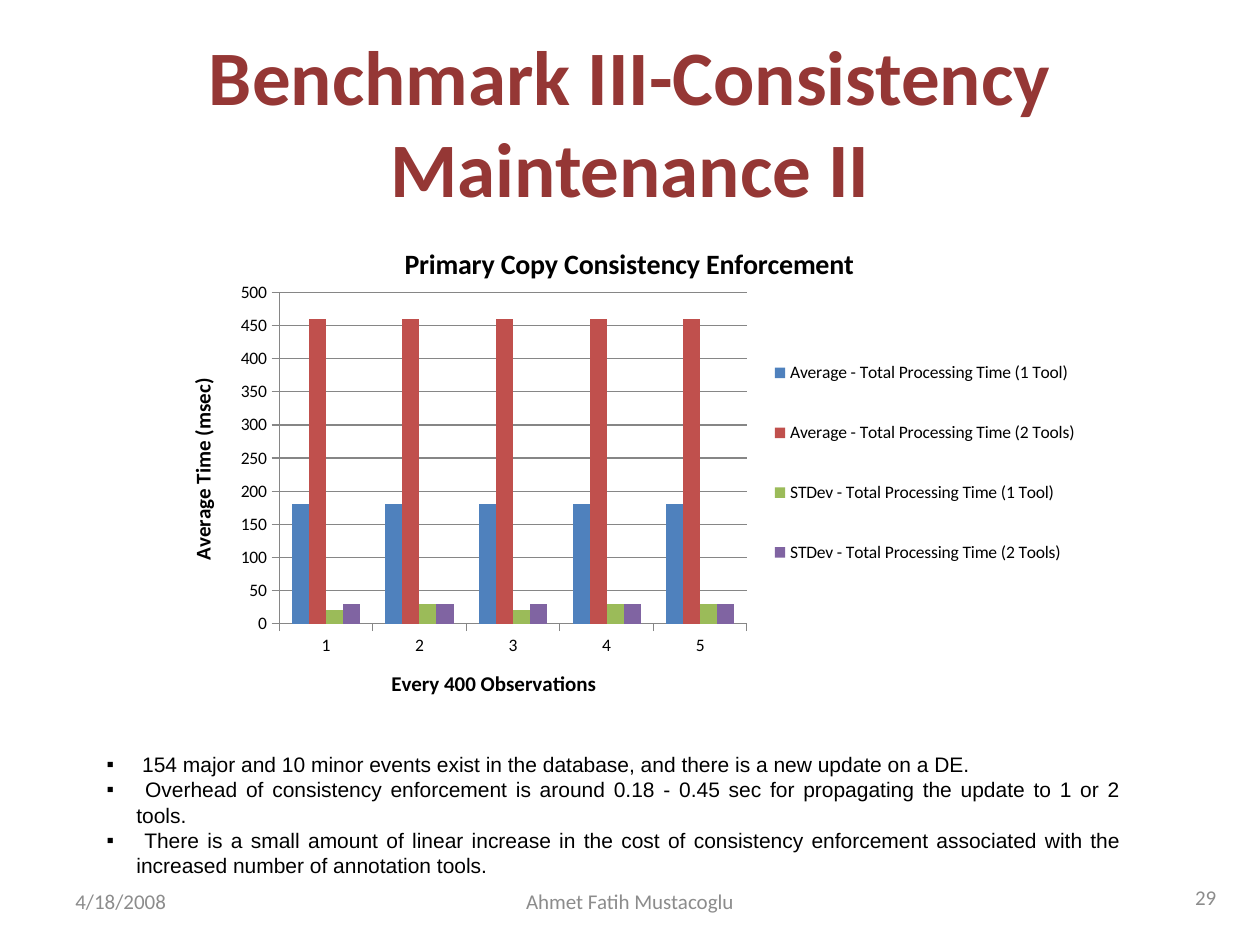
from lxml.etree import SubElement
from pptx import Presentation
from pptx.chart.data import CategoryChartData as Data
from pptx.dml.color import RGBColor as RGB
from pptx.enum.chart import XL_CHART_TYPE as Kind, XL_LEGEND_POSITION as Side
from pptx.enum.chart import XL_TICK_MARK as Tick
from pptx.enum.text import MSO_ANCHOR as Anchor, PP_ALIGN as Align
from pptx.oxml import parse_xml
from pptx.oxml.ns import nsdecls, qn
from pptx.util import Cm, Pt

# Content
HUES = {"title": "953735", "foot": "8C8C8C", "text": "000000", "axis": "868686"}
TITLE = "Benchmark III-Consistency Maintenance II"
NOTES = [
    " 154 major and 10 minor events exist in the database, and there is a new update on a DE.",
    " Overhead of consistency enforcement is around 0.18 - 0.45 sec for propagating the update"
    " to 1 or 2 tools.",
    " There is a small amount of linear increase in the cost of consistency enforcement"
    " associated with the increased number of annotation tools.",
]
FEET = [  # text, left, top, width, alignment
    ("4/18/2008", 1.27, 17.65, 5.92, Align.LEFT),
    ("Ahmet Fatih Mustacoglu", 8.68, 17.65, 8.04, Align.CENTER),
    ("29", 18.85, 17.57, 5.92, Align.RIGHT),
]
HEAD = "Primary Copy Consistency Enforcement"
X_NAME, Y_NAME = "Every 400 Observations", "Average Time (msec)"
CATS = ["1", "2", "3", "4", "5"]
SERIES = [
    ("Average - Total Processing Time (1 Tool)", (180, 180, 180, 180, 180), "4F81BD"),
    ("Average - Total Processing Time (2 Tools)", (460, 460, 460, 460, 460), "C0504D"),
    ("STDev - Total Processing Time (1 Tool)", (20, 30, 20, 30, 30), "9BBB59"),
    ("STDev - Total Processing Time (2 Tools)", (30, 30, 30, 30, 30), "8064A2"),
]
# Left, top, width and height in percent of the chart
PLOT = (12.2, 13.9, 50.5, 66.4)
KEY = (64.9, 20, 34, 56)


def style(font, size, hue, bold=False, face="Calibri"):
    font.name, font.size, font.bold = face, Pt(size), bold
    font.color.rgb = RGB.from_string(HUES[hue])


def add_text(slide, box, lines, align, anchor, *look):
    frame = slide.shapes.add_textbox(*map(Cm, box)).text_frame
    frame.word_wrap, frame.vertical_anchor = True, anchor
    frame.text = "\n".join(lines)
    for para in frame.paragraphs:
        para.alignment = align
        style(para.font, *look)
    return frame


def name_part(part, text, size):
    frame = part.text_frame
    frame.text = text
    style(frame.paragraphs[0].font, size, "text", True)


def place(node, spots, inner=False):
    """Give a plot area or legend a fixed place on the chart."""
    rows = [("layoutTarget", "inner")] if inner else []
    rows += [("xMode", "edge"), ("yMode", "edge")]
    rows += [(tag, spot / 100) for tag, spot in zip("xywh", spots)]
    body = "".join(f'<c:{tag} val="{val}"/>' for tag, val in rows)
    for old in node.findall(qn("c:layout")):
        node.remove(old)
    new = parse_xml(f'<c:layout {nsdecls("c")}><c:manualLayout>{body}'
                    "</c:manualLayout></c:layout>")
    node.insert(0 if inner else 1, new)


def add_bars(slide):
    data = Data()
    data.categories = CATS
    for name, vals, _ in SERIES:
        data.add_series(name, vals)
    box = map(Cm, (3.35, 4.5, 18.67, 10.06))
    chart = slide.shapes.add_chart(Kind.COLUMN_CLUSTERED, *box, data).chart
    style(chart.font, 10, "text")
    chart.has_title = True
    name_part(chart.chart_title, HEAD, 16)

    # Bars
    plot = chart.plots[0]
    plot.gap_width, plot.overlap, plot.vary_by_categories = 150, 0, False
    for bars, (_, _, hue) in zip(plot.series, SERIES):
        bars.format.fill.solid()
        bars.format.fill.fore_color.rgb = RGB.from_string(hue)

    # Axes
    gray = RGB.from_string(HUES["axis"])
    x_axis, y_axis = chart.category_axis, chart.value_axis
    y_axis.minimum_scale, y_axis.maximum_scale, y_axis.major_unit = 0, 500, 50
    y_axis.has_major_gridlines = True
    y_axis.major_gridlines.format.line.color.rgb = gray
    for axis, name in ((x_axis, X_NAME), (y_axis, Y_NAME)):
        axis.major_tick_mark, axis.minor_tick_mark = Tick.OUTSIDE, Tick.NONE
        axis.format.line.color.rgb = gray
        name_part(axis.axis_title, name, 12)

    # Legend and layout
    chart.has_legend = True
    key = chart.legend
    key.position, key.include_in_layout = Side.RIGHT, False
    style(key.font, 10, "text")
    root = chart.element
    place(root.find(".//" + qn("c:plotArea")), PLOT, True)
    place(root.find(".//" + qn("c:legend")), KEY)


def add_notes(slide):
    frame = add_text(slide, (1.9, 15.03, 20.96, 2.31), NOTES, Align.JUSTIFY,
                     Anchor.TOP, 12, "text", False, "Arial")
    for para in frame.paragraphs:
        props = para._p.get_or_add_pPr()
        props.set("marL", str(Cm(0.6)))
        props.set("indent", str(-Cm(0.6)))
        font = SubElement(props, qn("a:buFont"))
        font.set("typeface", "Arial")
        mark = SubElement(props, qn("a:buChar"))
        mark.set("char", "▪")
        # Bullets come before the default run style
        for run in props.findall(qn("a:defRPr")):
            props.append(run)


def main():
    deck = Presentation()
    deck.slide_width, deck.slide_height = Cm(25.4), Cm(19.05)
    slide = deck.slides.add_slide(deck.slide_layouts[6])
    add_text(slide, (0.64, 0.43, 24.13, 4.01), [TITLE], Align.CENTER,
             Anchor.MIDDLE, 44, "title", True)
    add_bars(slide)
    add_notes(slide)
    for text, left, top, width, align in FEET:
        add_text(slide, (left, top, width, 1.02), [text], align,
                 Anchor.MIDDLE, 12, "foot")
    deck.save("out.pptx")


if __name__ == "__main__":
    main()
